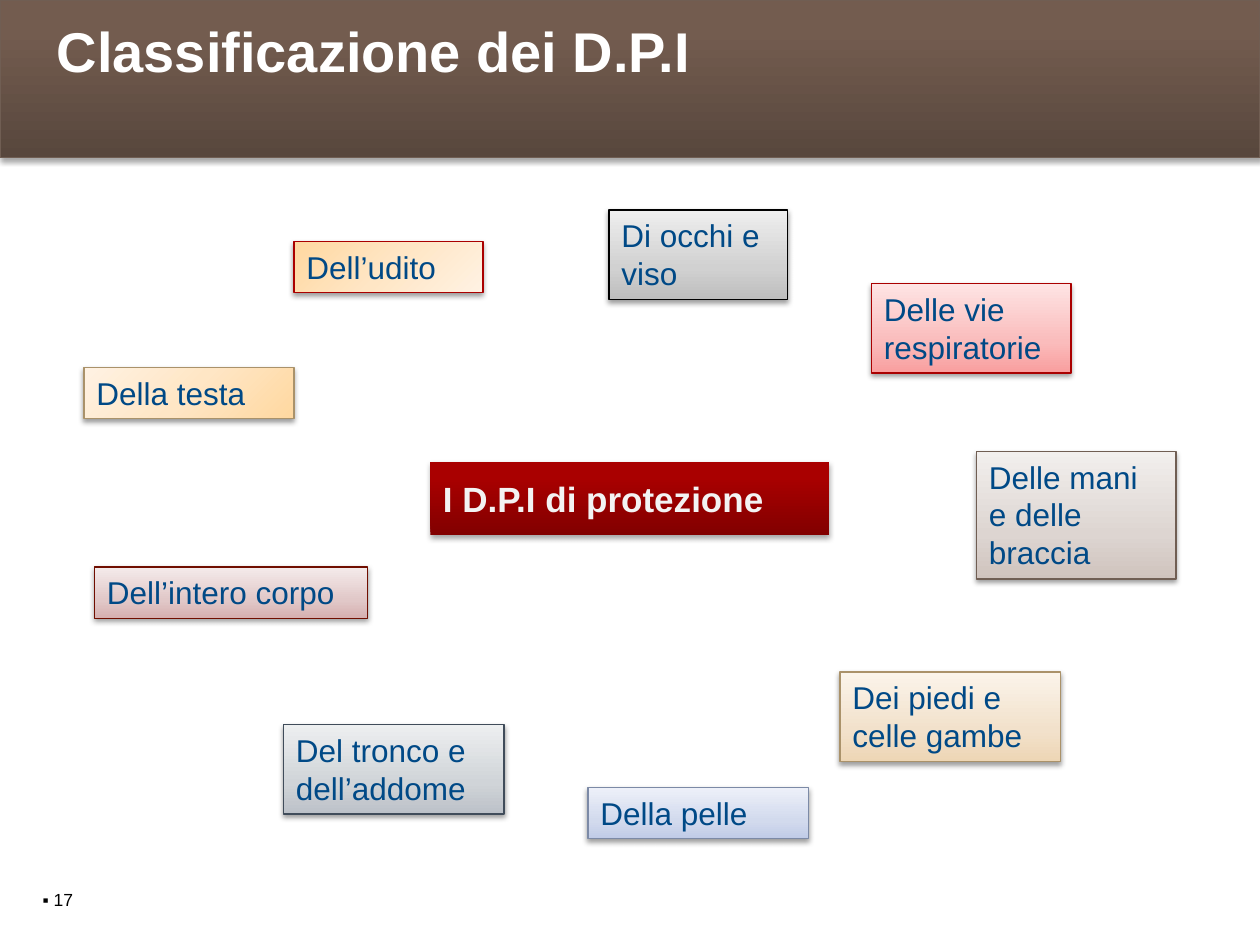
from lxml import etree
from pptx import Presentation
from pptx.dml.color import RGBColor as RGB
from pptx.enum.shapes import MSO_SHAPE as SHAPE
from pptx.enum.text import MSO_ANCHOR as ANCHOR, PP_ALIGN as ALIGN
from pptx.oxml import parse_xml
from pptx.oxml.ns import nsdecls, qn
from pptx.util import Pt

C = {"title": "FFFFFF", "number": "000000", "center": "F3F3F3", "label": "004986",
     "band": "705E53", "red": "AA0000", "gold": "AA926A", "black": "000000",
     "slate": "404C5A", "blue": "7C8AA6", "maroon": "700E00", "shadow": "000000"}

UP = '<a:lin ang="16200000" scaled="0"/>'
DIAGONAL = '<a:lin ang="13500000" scaled="0"/>'
CORNER = '<a:path path="circle"><a:fillToRect r="100000" b="100000"/></a:path>'

BAND_STOPS = [(0, "58473D"), (80, "735C4F"), (100, "745C4F")]
CENTER_STOPS = [(0, "820000"), (80, "A90000"), (100, "A90000")]
LINE_H, MARGIN_H = 21.8, 7.5

# (text, left, top, width, line count, border, middle stop, gradient colours, direction)
WARM = ("FFD8A0", "FFE6C5", "FFF2E3")
LABELS = [
    ("Della testa", 48, 210, 120, 1, "gold", 50, WARM, DIAGONAL),
    ("Dell’udito", 168, 138, 108, 1, "red", 50, WARM, CORNER),
    ("Di occhi e viso", 348, 120, 102, 2, "black", 35, ("BDBDBD", "D1D1D1", "EEEEEE"), UP),
    ("Delle vie respiratorie", 498, 162, 114, 2, "red", 35, ("F99E9E", "FABCBC", "FEE4E4"), UP),
    ("Delle mani e delle braccia", 558, 258, 114, 3, "band", 35, ("CFC3BD", "DDD5D1", "F2EFED"), UP),
    ("Dei piedi e celle gambe", 480, 384, 126, 2, "gold", 35, ("EDD6B5", "F2E1CB", "FBF4EA"), UP),
    ("Del tronco e dell’addome", 162, 414, 126, 2, "slate", 35, ("BCC1C8", "D0D4D8", "EDEFF0"), UP),
    ("Della pelle", 336, 450, 126, 1, "blue", 35, ("C0CBE7", "D2DAED", "EDF0F9"), UP),
    ("Dell’intero corpo", 54, 324, 156, 1, "maroon", 35, ("D6B0B0", "E1C8C8", "F4EAEA"), UP),
]


def write(shape, text, size, color, bold=False, anchor=ANCHOR.TOP):
    tf = shape.text_frame
    tf.word_wrap = True
    tf.vertical_anchor = anchor
    tf.text = text
    p = tf.paragraphs[0]
    p.alignment = ALIGN.LEFT
    font = p.runs[0].font
    font.name, font.size, font.bold = "Arial", Pt(size), bold
    font.color.rgb = RGB.from_string(C[color])
    return tf


def add_box(slide, box, stops, direction=UP, border=None, opacity=38, distance=1.6):
    sp = slide.shapes.add_shape(SHAPE.RECTANGLE, *map(Pt, box))
    if border:
        sp.line.color.rgb = RGB.from_string(C[border])
        sp.line.width = Pt(0.75)
    else:
        sp.line.fill.background()
    sp.fill.solid()
    sp.shadow.inherit = False
    props = sp._element.spPr
    marks = "".join(f'<a:gs pos="{pos * 1000}"><a:srgbClr val="{color}"/></a:gs>'
                    for pos, color in stops)
    props.replace(props.find(qn("a:solidFill")), parse_xml(
        f'<a:gradFill {nsdecls("a")} rotWithShape="1"><a:gsLst>{marks}</a:gsLst>'
        f'{direction}</a:gradFill>'))
    shadow = etree.SubElement(
        props.find(qn("a:effectLst")), qn("a:outerShdw"), blurRad=str(Pt(3.1)),
        dist=str(Pt(distance)), dir="5400000", rotWithShape="0")
    color = etree.SubElement(shadow, qn("a:srgbClr"), val=C["shadow"])
    etree.SubElement(color, qn("a:alpha"), val=str(opacity * 1000))
    return sp


def main():
    prs = Presentation()
    prs.slide_width, prs.slide_height = Pt(720), Pt(540)
    s = prs.slides.add_slide(prs.slide_layouts[6])

    add_box(s, (0, 0, 720, 90), BAND_STOPS, border="band", opacity=35, distance=1.8)

    title = s.shapes.add_textbox(Pt(26.6), Pt(8.6), Pt(671), Pt(41))
    tf = write(title, "Classificazione dei D.P.I", 32, "title", bold=True)
    tf.margin_left = tf.margin_right = Pt(5.8)
    tf.paragraphs[0].line_spacing = 0.95

    number = s.shapes.add_textbox(Pt(17.3), Pt(504.7), Pt(105.8), Pt(19.4))
    write(number, "▪ 17", 10, "number")

    center = add_box(s, (246, 264, 228, 41.8), CENTER_STOPS, opacity=35, distance=1.8)
    write(center, "I D.P.I di protezione", 20, "center", bold=True, anchor=ANCHOR.MIDDLE)

    for text, left, top, width, lines, border, middle, colors, direction in LABELS:
        box = (left, top, width, MARGIN_H + lines * LINE_H)
        sp = add_box(s, box, zip((0, middle, 100), colors), direction, border)
        write(sp, text, 18, "label")

    prs.save("out.pptx")


if __name__ == "__main__":
    main()
